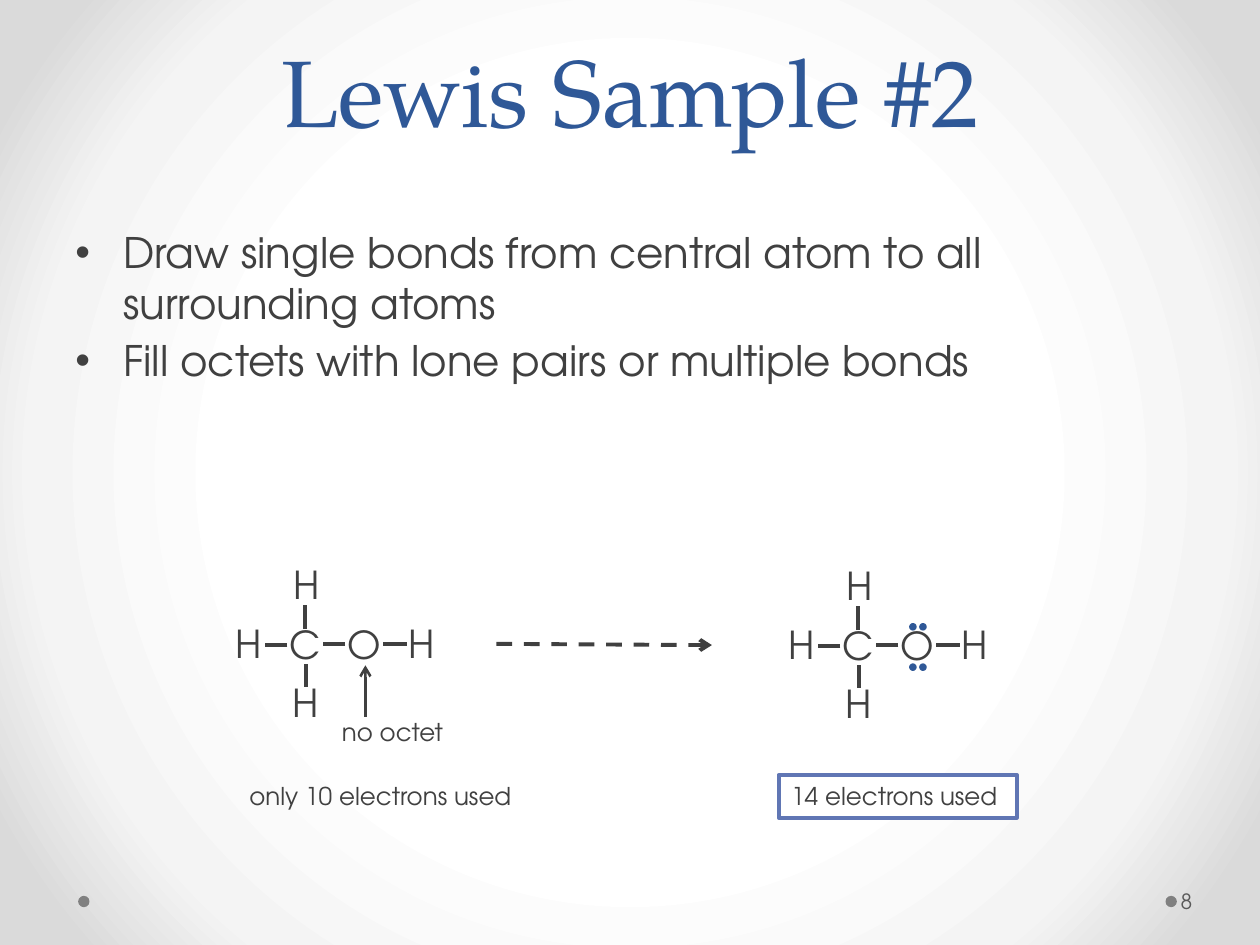
from lxml import etree
from pptx import Presentation, util as u
from pptx.dml.color import RGBColor
from pptx.enum import dml, shapes, text
from pptx.oxml import parse_xml
from pptx.oxml.ns import nsdecls, qn

SANS, SERIF = "TeX Gyre Adventor", "TeX Gyre Pagella"
DARK, BLUE, GREY = "404040", "2F5897", "808080"
BACKGROUND_STOPS = [(50, "FFFFFF"), (76, "F4F4F4"), (92, "DADADA")]
BULLETS = [
    "Draw single bonds from central atom to all surrounding atoms",
    "Fill octets with lone pairs or multiple bonds",
]
ATOMS = [
    ("H", 0, 0.47, 0.41), ("C", 0.43, 0.48, 0.45), ("O", 0.89, 0.48, 0.47),
    ("H", 1.37, 0.47, 0.41), ("H", 0.46, 0, 0.41), ("H", 0.45, 0.94, 0.41),
]
BONDS = [
    (0.51, 0.72, 0.33, 0.72), (0.97, 0.71, 0.79, 0.71), (1.27, 0.71, 1.46, 0.71),
    (0.66, 1.05, 0.66, 0.87), (0.65, 0.59, 0.65, 0.4),
]
MOLECULES = [(1.77, 4.4), (6.16, 4.41)]
LONE_PAIRS = [(x, y) for y in (4.95, 5.27) for x in (7.22, 7.3)]
CAPTIONS = [("no octet", 2.49, 5.64, 1.25), ("only 10 electrons used", 1.77, 6.15, 2.5)]


def color(value):
    return RGBColor.from_string(value)


def write(shape, lines, size=14, font=SANS, fill=DARK, align=text.PP_ALIGN.LEFT,
          anchor=text.MSO_ANCHOR.TOP, wrap=True, bullet=False, spacing=None):
    frame = shape.text_frame
    frame.word_wrap, frame.vertical_anchor = wrap, anchor
    for index, line in enumerate(lines):
        paragraph = frame.add_paragraph() if index else frame.paragraphs[0]
        paragraph.alignment = align
        if spacing:
            paragraph.line_spacing = u.Pt(spacing)
        if bullet:
            paragraph.space_before = u.Pt(4)
            properties = paragraph._p.get_or_add_pPr()
            properties.set("marL", str(u.Inches(0.38)))
            properties.set("indent", str(u.Inches(-0.38)))
            etree.SubElement(properties, qn("a:buFont"), typeface="Arial")
            etree.SubElement(properties, qn("a:buChar"), char="•")
        run = paragraph.add_run()
        run.text = line
        run.font.size, run.font.name = u.Pt(size), font
        run.font.color.rgb = color(fill)
    return frame


def add_text(slide, lines, x, y, width, height, **style):
    box = slide.shapes.add_textbox(*map(u.Inches, (x, y, width, height)))
    return write(box, lines, **style)


def add_shape(slide, kind, x, y, width, height, fill, line=None, weight=0.75):
    shape = slide.shapes.add_shape(kind, *map(u.Inches, (x, y, width, height)))
    shape.shadow.inherit = False
    shape.fill.solid()
    shape.fill.fore_color.rgb = color(fill)
    if line:
        shape.line.color.rgb = color(line)
        shape.line.width = u.Pt(weight)
    else:
        shape.line.fill.background()
    return shape


def add_line(slide, x1, y1, x2, y2, weight=2.25, arrow=False, dash=None):
    connector = slide.shapes.add_connector(
        shapes.MSO_CONNECTOR.STRAIGHT, *map(u.Inches, (x1, y1, x2, y2)))
    connector.line.color.rgb = color(DARK)
    connector.line.width = u.Pt(weight)
    if dash:
        connector.line.dash_style = dash
    if arrow:
        etree.SubElement(connector.line._get_or_add_ln(), qn("a:tailEnd"), type="arrow")
    etree.SubElement(connector._element.spPr, qn("a:effectLst"))


def set_background(slide):
    slide.background.fill.gradient()
    gradient = next(slide._element.iter(qn("a:gradFill")))
    stops = "".join(f'<a:gs pos="{position * 1000}"><a:srgbClr val="{value}"/></a:gs>'
                    for position, value in BACKGROUND_STOPS)
    gradient.getparent().replace(gradient, parse_xml(
        f'<a:gradFill {nsdecls("a")} rotWithShape="1"><a:gsLst>{stops}</a:gsLst>'
        '<a:path path="circle"><a:fillToRect l="50000" t="50000" r="50000" b="50000"/>'
        '</a:path></a:gradFill>'))


def add_molecule(slide, left, top):
    for symbol, x, y, width in ATOMS:
        add_text(slide, [symbol], left + x, top + y, width, 0.47, size=22, wrap=False)
    for x1, y1, x2, y2 in BONDS:
        add_line(slide, left + x1, top + y1, left + x2, top + y2)


def main():
    """Build the Lewis structure slide."""
    presentation = Presentation()
    presentation.slide_width, presentation.slide_height = u.Inches(10), u.Inches(7.5)
    slide = presentation.slides.add_slide(presentation.slide_layouts[6])
    set_background(slide)
    oval, center = shapes.MSO_SHAPE.OVAL, text.PP_ALIGN.CENTER

    for x in (9.25, 0.62):
        add_shape(slide, oval, x, 7.11, 0.09, 0.09, GREY)
    add_text(slide, ["Lewis Sample #2"], 0.5, 0, 9, 1.21, size=54, font=SERIF, fill=BLUE,
             align=center, anchor=text.MSO_ANCHOR.BOTTOM, spacing=58)
    add_text(slide, BULLETS, 0.5, 1.75, 9, 4.95, size=24, bullet=True)
    number = add_text(slide, ["8"], 9.34, 6.95, 0.61, 0.4, size=12, fill="595959",
                      anchor=text.MSO_ANCHOR.MIDDLE)
    number.margin_left, number.margin_right = u.Inches(0.03), u.Inches(0.05)

    for left, top in MOLECULES:
        add_molecule(slide, left, top)
    for x, y in LONE_PAIRS:
        add_shape(slide, oval, x, y, 0.05, 0.05, BLUE, BLUE)
    add_line(slide, 3.94, 5.11, 5.65, 5.12, arrow=True, dash=dml.MSO_LINE.DASH)
    add_line(slide, 2.9, 5.69, 2.9, 5.28, weight=1.5, arrow=True)

    result = add_shape(slide, shapes.MSO_SHAPE.RECTANGLE, 6.18, 6.15, 1.89, 0.34,
                       "FFFFFF", "6076B4", 2.25)
    write(result, ["14 electrons used "], align=center)
    for caption, x, y, width in CAPTIONS:
        add_text(slide, [caption], x, y, width, 0.34, align=center)
    presentation.save("out.pptx")


if __name__ == "__main__":
    main()
